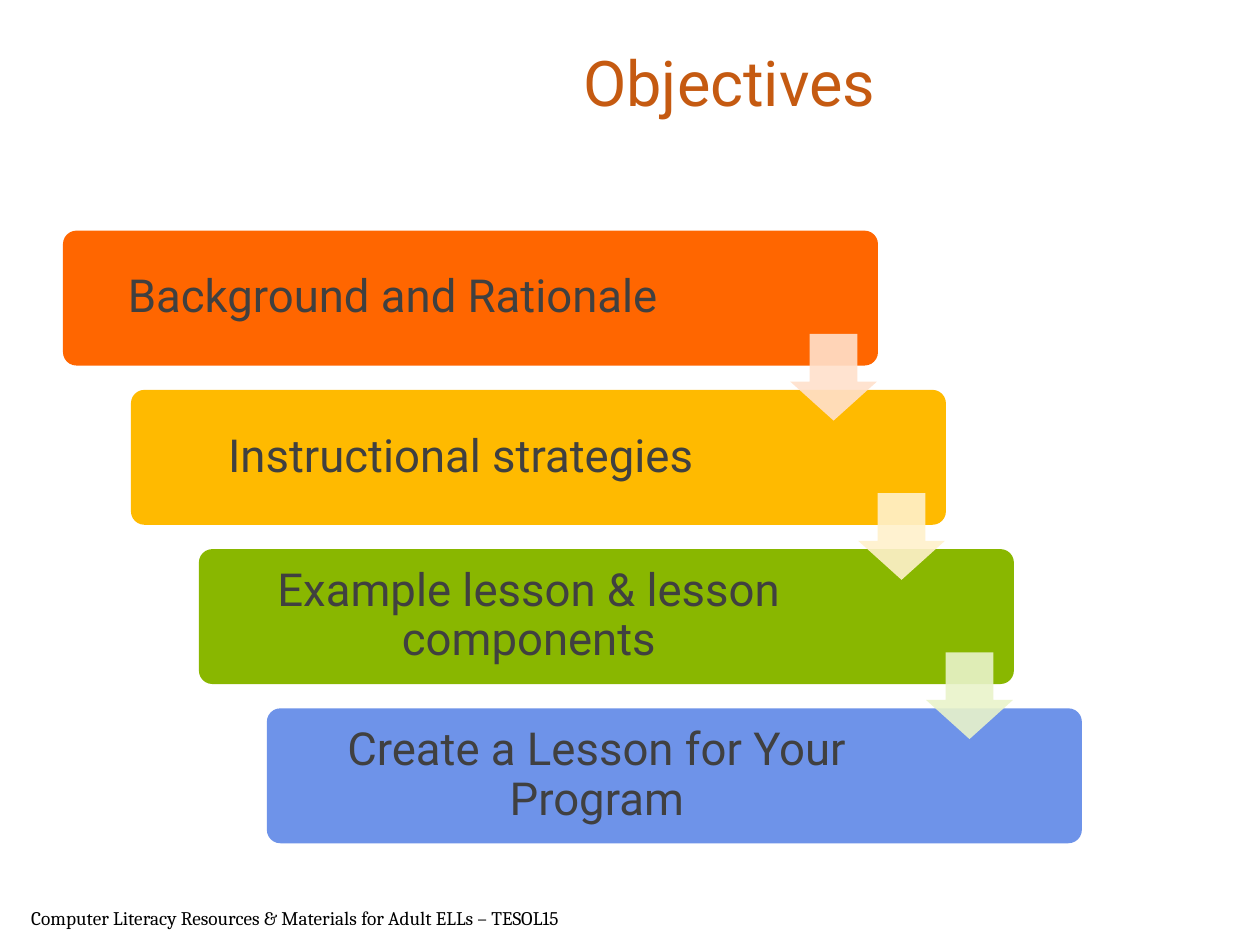
from lxml.etree import SubElement
from pptx import Presentation
from pptx.dml.color import RGBColor
from pptx.enum.shapes import MSO_SHAPE
from pptx.enum.text import MSO_ANCHOR, PP_ALIGN
from pptx.oxml.ns import qn
from pptx.util import Cm, Pt

COLORS = {
    "title": "C55A11",
    "text": "404040",
    "footer": "000000",
    "orange": "FF6600",
    "yellow": "FFBA00",
    "green": "89B700",
    "blue": "6E93E9",
    "pale_orange": "FFE0CB",
    "pale_yellow": "FFF1CB",
    "pale_green": "E9F3CA",
}
OBJECTIVES = [
    ("Background and Rationale", "orange"),
    ("Instructional strategies", "yellow"),
    ("Example lesson & lesson components", "green"),
    ("Create a Lesson for Your Program", "blue"),
]
ARROWS = ["pale_orange", "pale_yellow", "pale_green"]
STEP_X, STEP_Y = 1.37, 3.21


def format_paragraph(paragraph, font_name, size, color):
    paragraph.font.name = font_name
    paragraph.font.size = Pt(size)
    paragraph.font.color.rgb = RGBColor.from_string(COLORS[color])


def add_filled_shape(slide, kind, left, top, width, height, color):
    shape = slide.shapes.add_shape(kind, Cm(left), Cm(top), Cm(width), Cm(height))
    shape.shadow.inherit = False
    shape.fill.solid()
    shape.fill.fore_color.rgb = RGBColor.from_string(COLORS[color])
    shape.line.fill.background()
    return shape


def add_title(slide, text):
    title = slide.shapes.title
    title.left, title.top, title.width, title.height = Cm(5.28), Cm(0.05), Cm(18.85), Cm(3.18)
    frame = title.text_frame
    frame.text = text
    frame.vertical_anchor = MSO_ANCHOR.MIDDLE
    paragraph = frame.paragraphs[0]
    paragraph.alignment = PP_ALIGN.CENTER
    format_paragraph(paragraph, "Roboto", 36, "title")


def add_objective(slide, index, text, color):
    bar = add_filled_shape(slide, MSO_SHAPE.ROUNDED_RECTANGLE, 1.27 + index * STEP_X,
                           4.65 + index * STEP_Y, 16.43, 2.72, color)
    bar.adjustments[0] = 0.1
    frame = bar.text_frame
    frame.word_wrap = True
    frame.vertical_anchor = MSO_ANCHOR.MIDDLE
    frame.margin_left = frame.margin_top = frame.margin_bottom = Cm(0.28)
    frame.margin_right = Cm(3.4)
    frame.text = text
    paragraph = frame.paragraphs[0]
    paragraph.alignment = PP_ALIGN.CENTER
    paragraph.line_spacing = 0.9
    paragraph.space_after = Pt(9.1)
    format_paragraph(paragraph, "Roboto", 26, "text")


def add_arrow(slide, index, color):
    arrow = add_filled_shape(slide, MSO_SHAPE.DOWN_ARROW, 15.93 + index * STEP_X,
                             6.73 + index * STEP_Y, 1.75, 1.75, color)
    arrow.adjustments[0] = 0.55
    arrow.adjustments[1] = 0.45
    fill_color = arrow.fill._xPr.find(qn("a:solidFill"))[0]
    SubElement(fill_color, qn("a:alpha"), val="90000")


def add_footer(slide, text):
    box = slide.shapes.add_textbox(Cm(0.38), Cm(18.14), Cm(11.94), Cm(0.89))
    box.text_frame.word_wrap = True
    box.text_frame.text = text
    format_paragraph(box.text_frame.paragraphs[0], "Cambria", 11, "footer")


def main():
    presentation = Presentation()
    presentation.slide_width, presentation.slide_height = Cm(25.4), Cm(19.05)
    slide = presentation.slides.add_slide(presentation.slide_layouts[5])
    add_title(slide, "Objectives")
    for index, (text, color) in enumerate(OBJECTIVES):
        add_objective(slide, index, text, color)
    for index, color in enumerate(ARROWS):
        add_arrow(slide, index, color)
    add_footer(slide, "Computer Literacy Resources & Materials for Adult ELLs – TESOL15")
    presentation.save("out.pptx")


if __name__ == "__main__":
    main()
